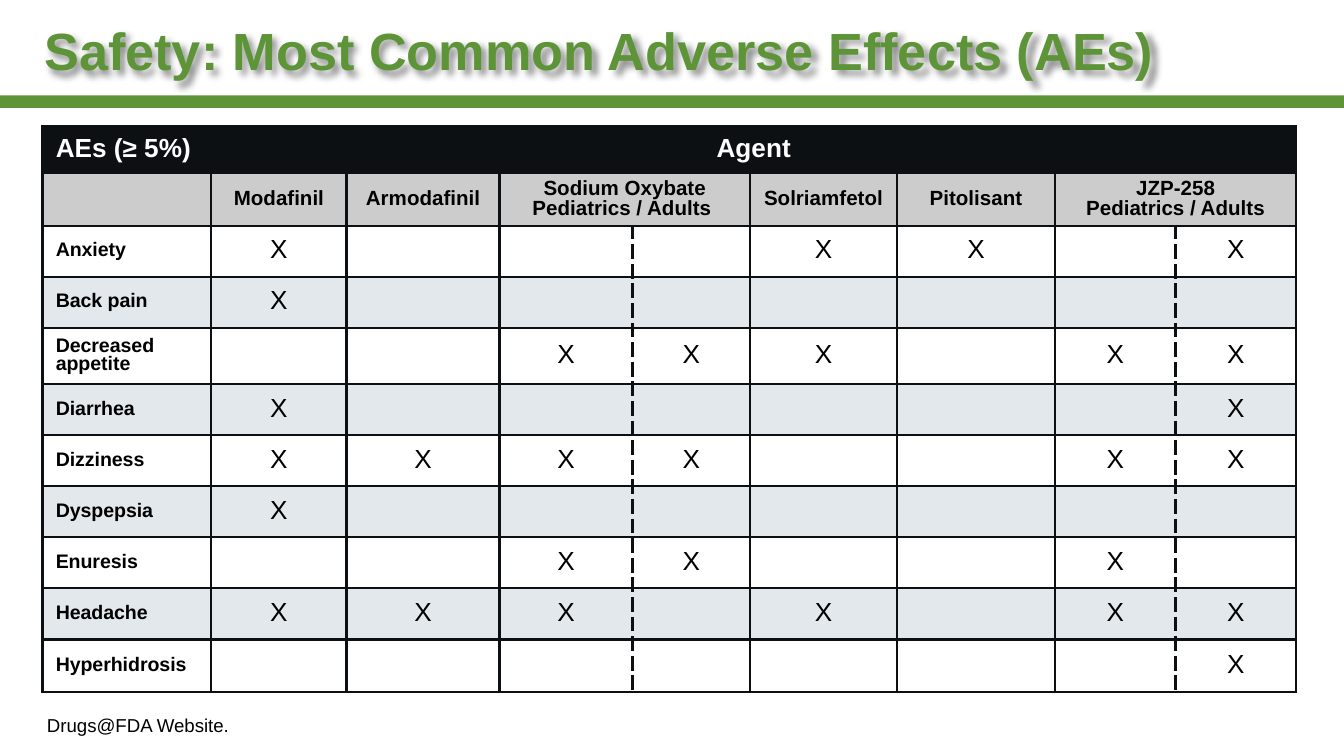
"""Build a slide with a table of the most common adverse effects by agent."""
from lxml.etree import SubElement
from pptx import Presentation
from pptx.dml.color import RGBColor
from pptx.enum.shapes import MSO_SHAPE
from pptx.enum.text import MSO_ANCHOR, PP_ALIGN
from pptx.oxml import parse_xml
from pptx.oxml.ns import qn
from pptx.util import Inches, Pt

WIDTH = Inches(10)
HEIGHT = WIDTH * 9 // 16
GREEN, INK, BLACK, WHITE = "5D9438", "0C1013", "000000", "FFFFFF"
GRAY, BAND = "CCCCCC", "E2E8EC"
NS = 'xmlns:a="http://schemas.openxmlformats.org/drawingml/2006/main"'

COLUMNS = [12.57, 10.08, 11.38, 9.9, 8.74, 10.94, 11.76, 8.97, 8.97]
ROWS = [6.23, 6.41, 6.58, 6.23, 7.43, 6.58, 6.58, 6.76, 5.52, 6.23, 6.94]
AGENTS = {
    1: "Modafinil",
    2: "Armodafinil",
    3: "Sodium Oxybate\vPediatrics / Adults ",
    5: "Solriamfetol",
    6: "Pitolisant",
    7: "JZP-258\vPediatrics / Adults",
}
SPLIT_COLUMNS = (3, 7)
EFFECTS = {
    "Anxiety": "X---XX-X",
    "Back pain": "X-------",
    "Decreased appetite": "--XXX-XX",
    "Diarrhea": "X------X",
    "Dizziness": "XXXX--XX",
    "Dyspepsia": "X-------",
    "Enuresis": "--XX--X-",
    "Headache": "XXX-X-XX",
    "Hyperhidrosis": "-------X",
}


def rgb(color):
    """Turn a hex string into a colour."""
    return RGBColor.from_string(color)


def across(percent):
    """Return a share of the slide's width."""
    return round(WIDTH * percent / 100)


def down(percent):
    """Return a share of the slide's height."""
    return round(HEIGHT * percent / 100)


def area(left, top, width, height):
    """Return a position and size given in percent of the slide."""
    return across(left), down(top), across(width), down(height)


def set_all(target, values):
    """Set the attributes named in a dict."""
    for name, value in values.items():
        setattr(target, name, value)


def add_mark_format(parent, tag, size):
    """Set the font of a line break or of an empty paragraph."""
    mark = SubElement(parent, qn(tag), sz=str(round(size * 100)))
    SubElement(mark, qn("a:latin"), typeface="Arial")


def write(tf, text, size, color, bold=False, align=PP_ALIGN.LEFT):
    """Write one paragraph with tight line spacing."""
    p = tf.paragraphs[0]
    set_all(p, {"text": text, "alignment": align, "line_spacing": 0.85})
    for r in p.runs:
        set_all(r.font, {"name": "Arial", "size": Pt(size), "bold": bold})
        r.font.color.rgb = rgb(color)
    for line_break in p._p.findall(qn("a:br")):
        add_mark_format(line_break, "a:rPr", size)
    if not text:
        add_mark_format(p._p, "a:endParaRPr", 18)


def add_text(s, box, margins, anchor, **style):
    """Add a wrapped text box."""
    sp = s.shapes.add_textbox(*area(*box))
    left, top, bottom = map(Inches, margins)
    set_all(sp.text_frame, {
        "word_wrap": True, "vertical_anchor": anchor, "margin_left": left,
        "margin_right": 0, "margin_top": top, "margin_bottom": bottom,
    })
    write(sp.text_frame, **style)
    return sp


def add_soft_shadow(sp):
    """Give the text of an unfilled shape a blurred shadow."""
    sp._element.spPr.append(parse_xml(
        f'<a:effectLst {NS}><a:outerShdw blurRad="38100" dist="38100" '
        'dir="2700000" algn="tl"><a:srgbClr val="000000">'
        '<a:alpha val="43000"/></a:srgbClr></a:outerShdw></a:effectLst>'))


def add_bar(s, box, color):
    """Add a plain coloured bar."""
    sp = s.shapes.add_shape(MSO_SHAPE.RECTANGLE, *area(*box))
    sp.shadow.inherit = False
    sp.fill.solid()
    sp.fill.fore_color.rgb = rgb(color)
    sp.line.fill.background()


def set_borders(cell, dashed=""):
    """Draw the four cell borders, dashing the given side."""
    tc_pr = cell._tc.get_or_add_tcPr()
    for index, side in enumerate("LRTB"):
        dash = "sysDash" if side == dashed else "solid"
        tc_pr.insert(index, parse_xml(
            f'<a:ln{side} {NS} w="{Pt(1.5)}"><a:solidFill>'
            f'<a:srgbClr val="{INK}"/></a:solidFill>'
            f'<a:prstDash val="{dash}"/></a:ln{side}>'))


def fill_cell(cell, text, fill, size, color=BLACK, bold=True,
              align=PP_ALIGN.CENTER, dashed=""):
    """Format one table cell and write its text."""
    set_all(cell, {
        "vertical_anchor": MSO_ANCHOR.MIDDLE,
        "margin_left": Inches(0.1), "margin_right": Inches(0.1),
        "margin_top": Inches(0.04), "margin_bottom": Inches(0.04),
    })
    cell.fill.solid()
    cell.fill.fore_color.rgb = rgb(fill)
    set_borders(cell, dashed)
    write(cell.text_frame, text, size, color, bold, align)


def add_effects_table(s):
    """Add the table of adverse effects and agents."""
    box = area(3.15, 16.67, sum(COLUMNS), sum(ROWS))
    table = s.shapes.add_table(len(ROWS), len(COLUMNS), *box).table
    set_all(table, {"first_row": False, "horz_banding": False})
    for column, percent in zip(table.columns, COLUMNS):
        column.width = across(percent)
    for row, percent in zip(table.rows, ROWS):
        row.height = down(percent)

    titles = {0: "AEs (≥ 5%)", 1: "Agent"}
    for c in range(len(COLUMNS)):
        align = PP_ALIGN.CENTER if c else PP_ALIGN.LEFT
        fill_cell(table.cell(0, c), titles.get(c, ""), INK, 14, WHITE,
                  align=align)
        fill_cell(table.cell(1, c), AGENTS.get(c, ""), GRAY, 11)
    table.cell(0, 1).merge(table.cell(0, len(COLUMNS) - 1))
    for c in SPLIT_COLUMNS:
        table.cell(1, c).merge(table.cell(1, c + 1))

    dashes = {c + i: side for c in SPLIT_COLUMNS for i, side in enumerate("RL")}
    for r, (effect, marks) in enumerate(EFFECTS.items(), 2):
        fill = BAND if r % 2 else WHITE
        fill_cell(table.cell(r, 0), effect, fill, 10.5, align=PP_ALIGN.LEFT)
        for c, mark in enumerate(marks, 1):
            fill_cell(table.cell(r, c), mark.strip("-"), fill, 14, bold=False,
                      dashed=dashes.get(c, ""))


def main():
    """Build and save the slide."""
    prs = Presentation()
    set_all(prs, {"slide_width": WIDTH, "slide_height": HEIGHT})
    s = prs.slides.add_slide(prs.slide_layouts[6])
    add_bar(s, (0, 12.63, 100, 1.65), GREEN)
    title = add_text(s, (3.3, 2.72, 93.2, 8.9), (0, 0.05, 0.05),
                     MSO_ANCHOR.MIDDLE, size=28, color=GREEN, bold=True,
                     text="Safety: Most Common Adverse Effects (AEs)")
    add_soft_shadow(title)
    add_text(s, (0, 94.84, 100, 5.16), (0.35, 0, 0.15), MSO_ANCHOR.BOTTOM,
             size=10, color=BLACK, text="Drugs@FDA Website.")
    add_effects_table(s)
    prs.save("out.pptx")


if __name__ == "__main__":
    main()
